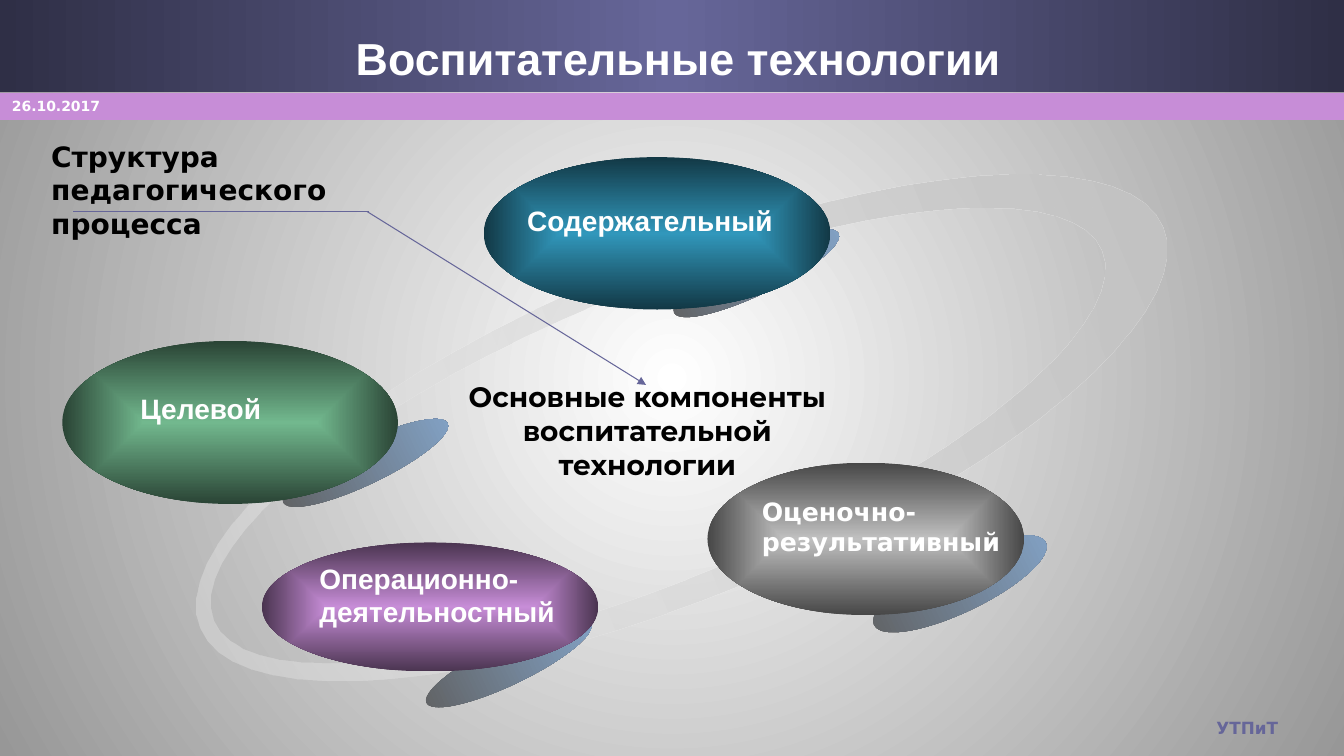
import math

import pptx
import pptx.dml.color
import pptx.enum.shapes
import pptx.enum.text
import pptx.oxml
import pptx.oxml.ns
import pptx.util

Cm = pptx.util.Cm
SHAPES = pptx.enum.shapes.MSO_SHAPE
ALIGN = pptx.enum.text.PP_ALIGN
INDIGO, LILAC, WHITE, BLACK = "666699", "C78DD7", "FFFFFF", "000000"
WIDTH, HEIGHT = 33.87, 19.05

TITLE = ("Воспитательные технологии", (4.6, 0.64, 24.99, 1.6), 32, "Arial", WHITE, ALIGN.CENTER)

# text, box (left, top, width, height in cm), size, font, colour, alignment
LABELS = [
    ("УТПиТ", (21.74, 17.96, 10.72, 0.89), 12, "DejaVu Sans", INDIGO, ALIGN.RIGHT),
    ("26.10.2017", (0.05, 2.34, 31.32, 0.64), 10, "DejaVu Sans", WHITE, ALIGN.LEFT),
    ("Оценочно-\nрезультативный", (18.95, 12.37, 6.6, 1.8), 18, "DejaVu Sans", WHITE, ALIGN.LEFT),
    ("Основные компоненты воспитательной технологии", (11.35, 9.45, 9.93, 2.79), 20,
     "Montserrat", BLACK, ALIGN.CENTER),
    ("Структура педагогического процесса", (1.04, 3.38, 10.06, 2.74), 20,
     "DejaVu Sans", BLACK, ALIGN.LEFT),
    ("Содержательный", (13, 5, 6.76, 1.09), 20, "Arial", WHITE, ALIGN.CENTER),
    ("Операционно-\nдеятельностный", (7.8, 14.02, 6.78, 1.96), 20, "Arial", WHITE, ALIGN.LEFT),
    ("Целевой", (1.68, 9.75, 6.76, 1.09), 20, "Arial", WHITE, ALIGN.CENTER),
]

# box, centre colour, edge colour, box of the shadow
COMPONENTS = [
    ((12.19, 3.96, 8.74, 3.84), "3197BB", "123845", (16.76, 6.35, 4.6, 1.07)),
    ((1.57, 8.59, 8.46, 4.11), "72B88E", "2A4435", (6.91, 11.13, 4.6, 1.07)),
    ((6.6, 13.67, 8.48, 3.25), LILAC, "4A3450", (10.52, 16.18, 4.6, 1.07)),
    ((17.83, 11.66, 7.98, 3.84), "C0C0C0", "474747", (21.79, 14, 4.8, 1.42)),
]

# centre x, centre y, half width, half height, before rotation
RING_ELLIPSES = [(17.18, 10.78, 13.14, 4.23), (16.55, 10.73, 12.12, 3.63)]
RING_TILT, SHADOW_TILT = -22.6, -25.7
RING_STEPS = 72

# from x, from y, to x, to y, arrowhead
LINES = [(9.25, 5.33, 16.28, 9.7, True), (9.3, 5.33, 1.85, 5.33, False)]


def rgb(color):
    return pptx.dml.color.RGBColor.from_string(color)


def gradient(fill, parent, stops, center=None):
    """Fill with (position, colour, opacity) stops, running left to right or out from the centre."""
    fill.solid()
    gs = "".join(f'<a:gs pos="{pos * 1000}"><a:srgbClr val="{color}">'
                 f'<a:alpha val="{alpha * 1000}"/></a:srgbClr></a:gs>'
                 for pos, color, alpha in stops)
    direction = '<a:lin ang="0" scaled="1"/>'
    if center:
        direction = (f'<a:path path="{center}"><a:fillToRect l="50000" t="50000" '
                     'r="50000" b="50000"/></a:path>')
    grad = pptx.oxml.parse_xml(
        f'<a:gradFill {pptx.oxml.ns.nsdecls("a")} rotWithShape="1">'
        f'<a:gsLst>{gs}</a:gsLst>{direction}</a:gradFill>')
    parent.replace(parent.find(pptx.oxml.ns.qn("a:solidFill")), grad)


def add_plain(slide, kind, box, rotation=0):
    sp = slide.shapes.add_shape(kind, *map(Cm, box))
    sp.shadow.inherit = False
    sp.line.fill.background()
    sp.rotation = rotation
    return sp


def write(sp, text, box, size, font, color, align):
    sp.left, sp.top, sp.width, sp.height = map(Cm, box)
    tf = sp.text_frame
    tf.text = text
    tf.word_wrap = True
    tf.auto_size = pptx.enum.text.MSO_AUTO_SIZE.NONE
    tf.vertical_anchor = pptx.enum.text.MSO_ANCHOR.TOP
    for p in tf.paragraphs:
        p.alignment = align
        for r in p.runs:
            r.font.size = pptx.util.Pt(size)
            r.font.name = font
            r.font.bold = True
            r.font.color.rgb = rgb(color)


def add_ring(slide):
    outlines = []
    for cx, cy, a, b in RING_ELLIPSES:
        angles = [2 * math.pi * i / RING_STEPS for i in range(RING_STEPS)]
        outlines.append([(Cm(cx + a * math.cos(t)), Cm(cy + b * math.sin(t))) for t in angles])
    outer, inner = outlines
    builder = slide.shapes.build_freeform(*outer[0])
    builder.add_line_segments(outer[1:], close=True)
    builder.move_to(*inner[0])
    builder.add_line_segments(inner[1:], close=True)
    sp = builder.convert_to_shape()
    sp.shadow.inherit = False
    sp.line.fill.background()
    sp.rotation = RING_TILT
    gradient(sp.fill, sp.element.spPr, [(0, "EEEEEE", 36), (100, "C0C0C0", 100)])


def add_line(slide, x1, y1, x2, y2, arrow):
    line = slide.shapes.add_connector(
        pptx.enum.shapes.MSO_CONNECTOR.STRAIGHT, *map(Cm, (x1, y1, x2, y2)))
    line.line.color.rgb = rgb(INDIGO)
    line.line.width = pptx.util.Pt(0.75)
    ns = pptx.oxml.ns.nsdecls("a")
    if arrow:
        line.line._get_or_add_ln().append(
            pptx.oxml.parse_xml(f'<a:tailEnd {ns} type="triangle"/>'))
    line.element.spPr.append(pptx.oxml.parse_xml(f"<a:effectLst {ns}/>"))


def main():
    prs = pptx.Presentation()
    prs.slide_width, prs.slide_height = Cm(WIDTH), Cm(HEIGHT)
    slide = prs.slides.add_slide(prs.slide_layouts[5])
    bg_fill = slide.background.fill
    bg_fill.solid()
    gradient(bg_fill, slide.element.find(".//" + pptx.oxml.ns.qn("p:bgPr")),
             [(0, WHITE, 100), (100, "979797", 100)], "circle")

    band = add_plain(slide, SHAPES.RECTANGLE, (0, 0, WIDTH, 2.32))
    gradient(band.fill, band.element.spPr,
             [(0, "2F2F46", 100), (50, INDIGO, 100), (100, "2F2F46", 100)])
    strip = add_plain(slide, SHAPES.RECTANGLE, (0, 2.34, WIDTH, 0.68))
    strip.fill.solid()
    strip.fill.fore_color.rgb = rgb(LILAC)

    add_ring(slide)
    for *_, shadow_box in COMPONENTS:
        sp = add_plain(slide, SHAPES.OVAL, shadow_box, SHADOW_TILT)
        gradient(sp.fill, sp.element.spPr, [(0, "5F5F5F", 100), (100, "84A5CA", 100)])
    for box, center, edge, _ in COMPONENTS:
        sp = add_plain(slide, SHAPES.OVAL, box)
        gradient(sp.fill, sp.element.spPr, [(0, center, 100), (100, edge, 100)], "shape")
    for line in LINES:
        add_line(slide, *line)

    for label in LABELS:
        write(slide.shapes.add_textbox(0, 0, 0, 0), *label)
    title = slide.shapes.title
    write(title, *TITLE)
    slide.shapes.element.append(title.element)  # in front of the band
    prs.save("out.pptx")


if __name__ == "__main__":
    main()
